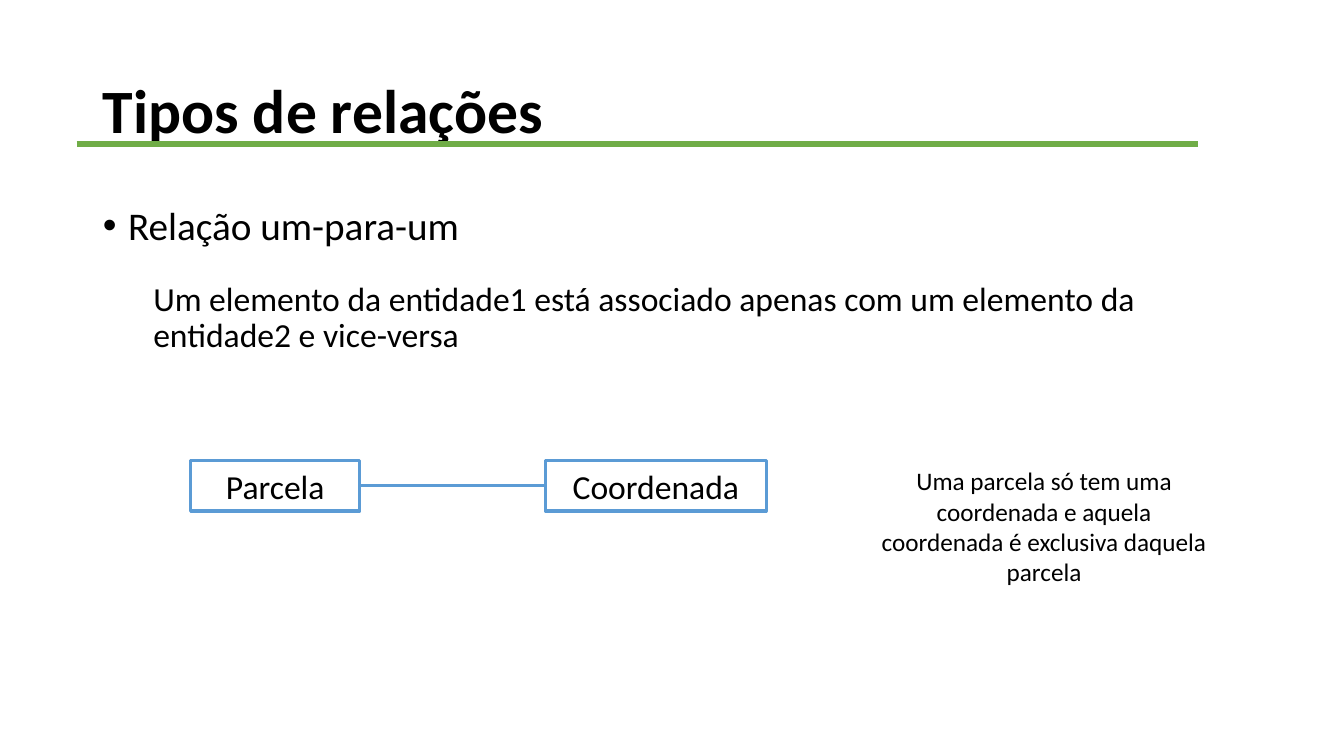
from pptx import Presentation
from pptx.dml.color import RGBColor
from pptx.enum.shapes import MSO_CONNECTOR as Conn, MSO_SHAPE as Shape
from pptx.enum.text import MSO_ANCHOR as Anchor, MSO_AUTO_SIZE as Fit, PP_ALIGN as Align
from pptx.oxml.ns import qn
from pptx.util import Inches, Pt

TITLE = "Tipos de relações"
# text, level, size, space before, left margin, indent, bullet
BODY = [
    ("Relação um-para-um", 0, 28, 10, 0.25, -0.25, "•"),
    ("Um elemento da entidade1 está associado apenas com um elemento da "
     "entidade2 e vice-versa", 1, 24, 24, 0.5, 0, None),
]
BOXES = [("Parcela", 1.89, 1.68), ("Coordenada", 5.41, 2.19)]
NOTE = "Uma parcela só tem uma coordenada e aquela coordenada é exclusiva daquela parcela"
ROW, HIGH = 4.57, 0.5
BLUE, GREEN, BLACK, WHITE = "5B9BD5", "70AD47", "000000", "FFFFFF"


def color(code):
    return RGBColor.from_string(code)


def place(shape, *rect):
    shape.left, shape.top, shape.width, shape.height = map(Inches, rect)


def style(para, size, align=Align.LEFT, bold=False):
    para.alignment = align
    for run in para.runs:
        font = run.font
        font.name, font.size, font.bold = "Calibri", Pt(size), bold
        font.color.rgb = color(BLACK)


def bullet(para, left, indent, mark):
    props = para._p.get_or_add_pPr()
    props.set("marL", str(Inches(left)))
    props.set("indent", str(Inches(indent)))
    node = props.makeelement(qn("a:buChar" if mark else "a:buNone"), {})
    if mark:
        node.set("char", mark)
    props.append(node)


def line(slide, ends, code, width):
    link = slide.shapes.add_connector(Conn.STRAIGHT, *map(Inches, ends))
    link.line.color.rgb = color(code)
    link.line.width = Pt(width)
    props = link._element.spPr
    props.append(props.makeelement(qn("a:effectLst"), {}))
    return link


def box(slide, text, left, width):
    rect = slide.shapes.add_shape(
        Shape.RECTANGLE, *map(Inches, (left, ROW, width, HIGH)))
    rect.shadow.inherit = False
    rect.fill.solid()
    rect.fill.fore_color.rgb = color(WHITE)
    rect.line.color.rgb = color(BLUE)
    rect.line.width = Pt(2.25)
    rect.text_frame.text = text
    style(rect.text_frame.paragraphs[0], 24, Align.CENTER)
    return rect


def main():
    deck = Presentation()
    deck.slide_width, deck.slide_height = Inches(13.33), Inches(7.5)
    slide = deck.slides.add_slide(deck.slide_layouts[1])

    title, body = slide.placeholders
    place(title, 0.92, 0.4, 11.5, 1.45)
    frame = title.text_frame
    frame.text = TITLE
    frame.auto_size, frame.vertical_anchor = Fit.NONE, Anchor.MIDDLE
    frame.paragraphs[0].line_spacing = 0.9
    style(frame.paragraphs[0], 44, bold=True)

    place(body, 0.92, 2, 11.5, 4.76)
    frame = body.text_frame
    frame.text = "\n".join(item[0] for item in BODY)
    frame.auto_size = Fit.NONE
    for para, item in zip(frame.paragraphs, BODY):
        _, para.level, size, gap, left, indent, mark = item
        para.line_spacing, para.space_before = 0.9, Pt(gap)
        style(para, size)
        bullet(para, left, indent, mark)

    first, second = [box(slide, *item) for item in BOXES]
    mid = ROW + HIGH / 2
    link = line(slide, (3.57, mid, 5.41, mid), BLUE, 2.25)
    link.begin_connect(first, 3)
    link.end_connect(second, 1)

    note = slide.shapes.add_textbox(*map(Inches, (8.6, ROW, 3.51, 1.31)))
    note.text_frame.word_wrap = True
    note.text_frame.text = NOTE
    style(note.text_frame.paragraphs[0], 18, Align.CENTER)

    line(slide, (0.76, 1.43, 11.88, 1.43), GREEN, 4.5)
    deck.save("out.pptx")


if __name__ == "__main__":
    main()
